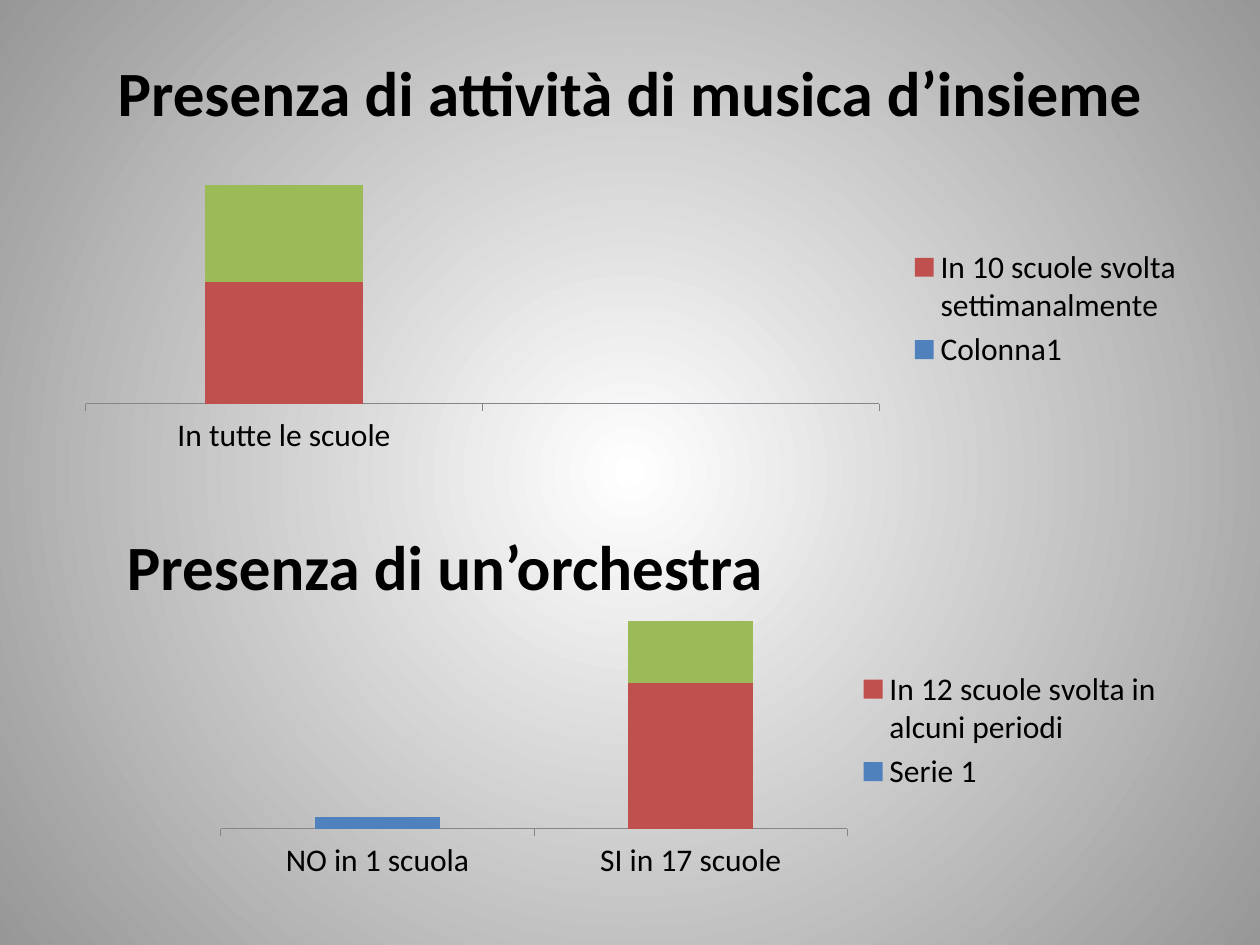
from lxml.etree import SubElement
from pptx import Presentation
from pptx.chart.data import CategoryChartData
from pptx.dml.color import RGBColor
from pptx.enum.chart import XL_CHART_TYPE, XL_LEGEND_POSITION, XL_TICK_MARK
from pptx.enum.text import MSO_ANCHOR, PP_ALIGN
from pptx.oxml.ns import qn
from pptx.util import Inches, Pt

WIDTH, HEIGHT = Inches(10), Inches(7.5)
SERIES_COLOURS = ["4F81BD", "C0504D", "9BBB59"]


def colour(code):
    """Turn a hex string into a colour."""
    return RGBColor.from_string(code)


def set_all(target, values):
    """Set every attribute in a dict of format values."""
    for name, value in values.items():
        setattr(target, name, value)


def area(left, top, width, height):
    """Turn shares of the slide's size into a box."""
    return [int(WIDTH * left), int(HEIGHT * top), int(WIDTH * width), int(HEIGHT * height)]


def style_font(font, size, bold=False):
    """Give a font the slide's typeface and colour."""
    set_all(font, {"name": "Calibri", "size": Pt(size), "bold": bold})
    font.color.rgb = colour("000000")


def paint_background(page):
    """Fill the page with a radial gradient, light in the centre."""
    fill = page.background.fill
    fill.gradient()
    for stop, code, position in zip(fill.gradient_stops, ["FFFFFF", "979797"], [0, 1]):
        stop.color.rgb = colour(code)
        stop.position = position
    gradient = page.element.find(".//" + qn("a:gradFill"))
    gradient.remove(gradient.find(qn("a:lin")))
    circle = SubElement(gradient, qn("a:path"), {"path": "circle"})
    SubElement(circle, qn("a:fillToRect"), dict.fromkeys("ltrb", "50000"))


def write_heading(shape, box, text, alignment, anchor):
    """Place a heading in its box and write its text."""
    set_all(shape, dict(zip(["left", "top", "width", "height"], box)))
    frame = shape.text_frame
    set_all(frame, {"word_wrap": True, "vertical_anchor": anchor})
    para = frame.paragraphs[0]
    para.alignment = alignment
    span = para.add_run()
    span.text = text
    style_font(span.font, 36, True)


def fix_plot(chart, shares):
    """Fix the inner plot area at shares of the chart's size."""
    plot_area = chart.element.find(".//" + qn("c:plotArea"))
    layout = plot_area.find(qn("c:layout"))
    if layout is None:
        layout = plot_area.makeelement(qn("c:layout"))
        plot_area.insert(0, layout)
    manual = SubElement(layout, qn("c:manualLayout"))
    names = ["layoutTarget", "xMode", "yMode", "x", "y", "w", "h"]
    for name, value in zip(names, ["inner", "edge", "edge", *shares]):
        SubElement(manual, qn("c:" + name), {"val": str(value)})


def add_legend(chart, hidden):
    """Put the legend on the right without one series."""
    chart.has_legend = True
    set_all(chart.legend, {"position": XL_LEGEND_POSITION.RIGHT, "include_in_layout": False})
    style_font(chart.legend.font, 18)
    legend = chart.element.find(".//" + qn("c:legend"))
    entry = legend.makeelement(qn("c:legendEntry"))
    SubElement(entry, qn("c:idx"), {"val": str(hidden)})
    SubElement(entry, qn("c:delete"), {"val": "1"})
    legend.find(qn("c:legendPos")).addnext(entry)


def add_stacked_chart(page, box, categories, series, maximum, plot_shares):
    """Draw a stacked column chart in its box."""
    data = CategoryChartData()
    data.categories = categories
    for name, values in series.items():
        data.add_series(name, values)
    chart = page.shapes.add_chart(XL_CHART_TYPE.COLUMN_STACKED, *box, data).chart
    chart.has_title = False
    style_font(chart.font, 18)
    plot = chart.plots[0]
    set_all(plot, {"gap_width": 150, "overlap": 100, "vary_by_categories": False})
    for column, code in zip(plot.series, SERIES_COLOURS):
        column.format.fill.solid()
        column.format.fill.fore_color.rgb = colour(code)
    set_all(chart.value_axis, {"visible": False, "has_major_gridlines": False,
                               "minimum_scale": 0, "maximum_scale": maximum})
    axis = chart.category_axis
    set_all(axis, {"major_tick_mark": XL_TICK_MARK.OUTSIDE, "has_major_gridlines": False})
    axis.format.line.color.rgb = colour("868686")
    axis.format.line.width = Pt(0.75)
    fix_plot(chart, plot_shares)
    add_legend(chart, 2)


def main():
    """Build the slide and save the deck."""
    deck = Presentation()
    set_all(deck, {"slide_width": WIDTH, "slide_height": HEIGHT})
    page = deck.slides.add_slide(deck.slide_layouts[5])
    paint_background(page)
    write_heading(page.shapes.title, area(0.05, 0.04, 0.9, 0.113),
                  "Presenza di attività di musica d’insieme", PP_ALIGN.CENTER, MSO_ANCHOR.MIDDLE)
    add_stacked_chart(page, area(0.05, 0.164, 0.9, 0.325), ["In tutte le scuole", ""], {
        "Colonna1": [None, 0],
        "In 10 scuole svolta settimanalmente": [100, None],
        "Series 3": [80, None],
    }, 200, [0.02, 0.02, 0.7, 0.79])
    add_stacked_chart(page, area(0.091, 0.605, 0.843, 0.336), ["NO in 1 scuola", "SI in 17 scuole"], {
        "Serie 1": [8, 0],
        "In 12 scuole svolta in alcuni periodi": [0, 100],
        "Series 3": [0, 42],
    }, 150, [0.1, 0.12, 0.59, 0.69])
    box = area(0.091, 0.552, 0.764, 0.095)
    write_heading(page.shapes.add_textbox(*box), box,
                  "Presenza di un’orchestra", PP_ALIGN.LEFT, MSO_ANCHOR.TOP)
    deck.save("out.pptx")


if __name__ == "__main__":
    main()
